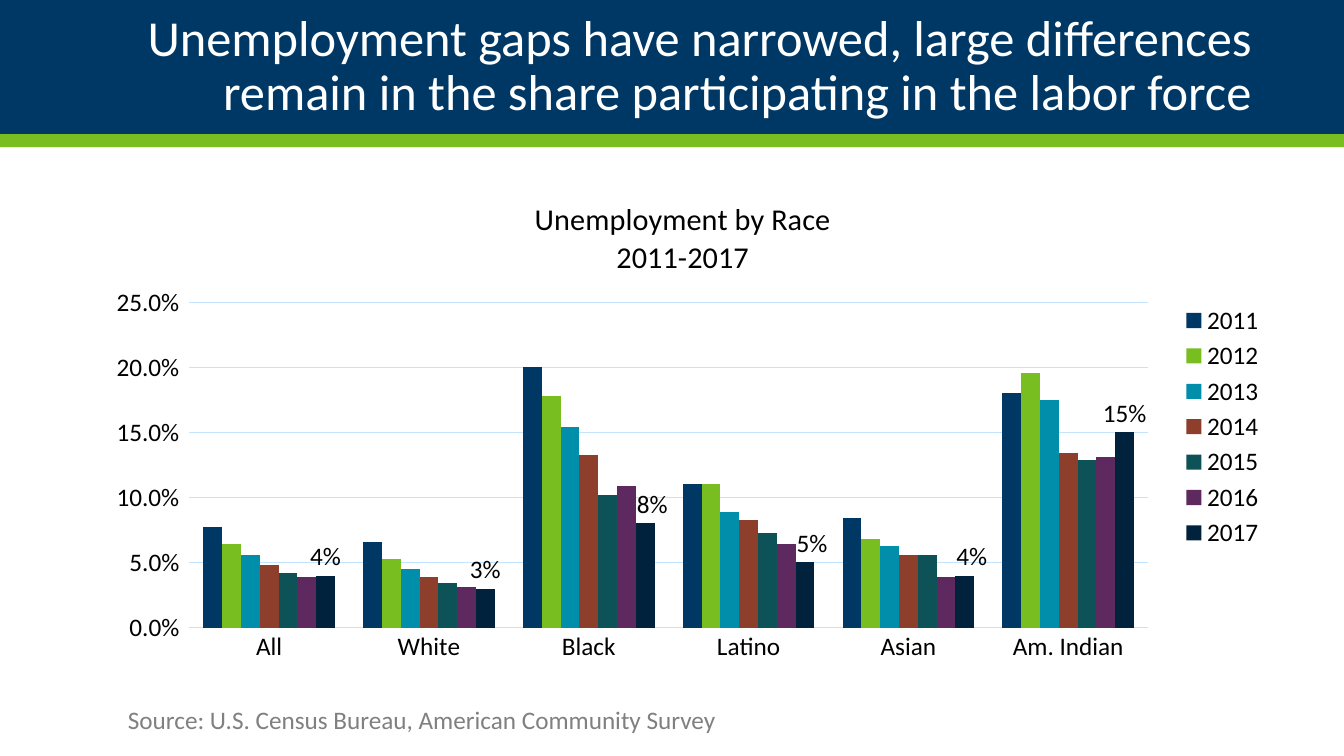
import pptx
import pptx.chart.data
import pptx.dml.color
import pptx.enum.chart
import pptx.enum.shapes
import pptx.enum.text
import pptx.oxml
import pptx.oxml.ns
import pptx.util

Inches = pptx.util.Inches
Pt = pptx.util.Pt
RGBColor = pptx.dml.color.RGBColor

NAVY = RGBColor(0x00, 0x38, 0x65)
GREEN = RGBColor(0x78, 0xBE, 0x21)
TEAL = RGBColor(0x00, 0x8E, 0xAA)
RUST = RGBColor(0x8D, 0x3F, 0x2B)
PINE = RGBColor(0x0D, 0x52, 0x57)
PLUM = RGBColor(0x5D, 0x29, 0x5F)
MIDNIGHT = RGBColor(0x00, 0x22, 0x3D)
PALE_BLUE = RGBColor(0xC2, 0xE4, 0xFF)
GRAY = RGBColor(0x80, 0x80, 0x80)
BLACK = RGBColor(0, 0, 0)
WHITE = RGBColor(0xFF, 0xFF, 0xFF)

GROUPS = ["All", "White", "Black", "Latino", "Asian", "Am. Indian"]
UNEMPLOYMENT = [
    ("2011", NAVY, (0.077, 0.066, 0.2, 0.11, 0.084, 0.18)),
    ("2012", GREEN, (0.064, 0.053, 0.178, 0.11, 0.068, 0.196)),
    ("2013", TEAL, (0.056, 0.045, 0.154, 0.089, 0.063, 0.175)),
    ("2014", RUST, (0.048, 0.039, 0.133, 0.083, 0.056, 0.134)),
    ("2015", PINE, (0.042, 0.034, 0.102, 0.073, 0.056, 0.129)),
    ("2016", PLUM, (0.039, 0.031, 0.109, 0.064, 0.039, 0.131)),
    ("2017", MIDNIGHT, (0.04, 0.03, 0.08, 0.05, 0.04, 0.15)),
]
SHIFTED_LABELS = ("Black", "Latino", "Asian")


def set_layout(element, index, **settings):
    """Give a chart part a manual layout, as its child number index."""
    for old in element.findall(pptx.oxml.ns.qn("c:layout")):
        element.remove(old)
    entries = "".join(f'<c:{name} val="{value}"/>' for name, value in settings.items())
    element.insert(index, pptx.oxml.parse_xml(
        f'<c:layout {pptx.oxml.ns.nsdecls("c")}>'
        f"<c:manualLayout>{entries}</c:manualLayout></c:layout>"))


class SlideBuilder:
    font_name = "Calibri"
    body_size = 18

    def __init__(self, page):
        self.page = page

    def style(self, font, color, size=body_size):
        font.name = self.font_name
        font.size = Pt(size)
        font.color.rgb = color

    def band(self, top, height, color):
        box = self.page.shapes.add_shape(
            pptx.enum.shapes.MSO_SHAPE.RECTANGLE,
            0, Inches(top), Inches(13.33), Inches(height))
        box.shadow.inherit = False
        box.fill.solid()
        box.fill.fore_color.rgb = color
        box.line.fill.background()

    def text(self, left, top, width, height, words, color, size=body_size):
        box = self.page.shapes.add_textbox(
            Inches(left), Inches(top), Inches(width), Inches(height))
        box.text_frame.word_wrap = True
        para = box.text_frame.paragraphs[0]
        para.text = words
        self.style(para.font, color, size)
        return box.text_frame

    def title(self, words):
        frame = self.text(0.92, 0, 11.5, 1.33, words, WHITE, 36)
        frame.margin_left = frame.margin_right = 0
        frame.vertical_anchor = pptx.enum.text.MSO_ANCHOR.MIDDLE
        frame.paragraphs[0].alignment = pptx.enum.text.PP_ALIGN.RIGHT
        frame.paragraphs[0].line_spacing = 0.9

    def column_chart(self, title_lines, groups, rows):
        data = pptx.chart.data.CategoryChartData(number_format="0.0%")
        data.categories = groups
        for year, color, values in rows:
            data.add_series(year, values)
        chart = self.page.shapes.add_chart(
            pptx.enum.chart.XL_CHART_TYPE.COLUMN_CLUSTERED,
            Inches(0.92), Inches(1.75), Inches(11.67), Inches(4.92), data).chart
        self.style(chart.font, BLACK)
        plot = chart.plots[0]
        plot.gap_width = 150
        plot.overlap = 0
        plot.vary_by_categories = False
        for series, (year, color, values) in zip(plot.series, rows):
            series.format.fill.solid()
            series.format.fill.fore_color.rgb = color
        set_layout(chart._chartSpace.chart.plotArea, 0, layoutTarget="inner",
                   xMode="edge", yMode="edge", x=0.082, y=0.254, w=0.815, h=0.656)
        self.chart_title(chart, title_lines)
        self.chart_axes(chart)
        self.chart_legend(chart)
        self.last_year_labels(plot.series[-1], groups)

    def chart_title(self, chart, lines):
        frame = chart.chart_title.text_frame
        frame.text = "\n".join(lines)
        for para in frame.paragraphs:
            self.style(para.font, BLACK, 21.6)
            para.font.bold = False
        set_layout(chart.chart_title._element, 1,
                   xMode="edge", yMode="edge", x=0.373, y=0.04)

    def chart_axes(self, chart):
        tick_mark = pptx.enum.chart.XL_TICK_MARK
        category, value = chart.category_axis, chart.value_axis
        for axis in (category, value):
            self.style(axis.tick_labels.font, BLACK)
        category.major_tick_mark = tick_mark.NONE
        value.major_tick_mark = tick_mark.OUTSIDE
        value.minimum_scale, value.maximum_scale, value.major_unit = 0, 0.25, 0.05
        value.tick_labels.number_format = "0.0%"
        value.tick_labels.number_format_is_linked = False
        value.format.line.fill.background()
        for line in (category.format.line, value.major_gridlines.format.line):
            line.color.rgb = PALE_BLUE
            line.width = Pt(0.75)

    def chart_legend(self, chart):
        chart.has_legend = True
        chart.legend.position = pptx.enum.chart.XL_LEGEND_POSITION.RIGHT
        chart.legend.include_in_layout = False
        self.style(chart.legend.font, BLACK)
        set_layout(chart.legend._element, 1, xMode="edge", yMode="edge",
                   x=0.92, y=0.25, w=0.08, h=0.51)

    def last_year_labels(self, series, groups):
        outside = pptx.enum.chart.XL_LABEL_POSITION.OUTSIDE_END
        labels = series.data_labels
        labels.show_value = True
        labels.number_format = "0%"
        labels.number_format_is_linked = False
        labels.position = outside
        self.style(labels.font, BLACK)
        for group in SHIFTED_LABELS:
            label = series.points[groups.index(group)].data_label
            self.style(label.font, BLACK)
            label.position = outside
            set_layout(label._dLbl, 1, x=0.006, y=0)


def main():
    deck = pptx.Presentation()
    deck.slide_width, deck.slide_height = Inches(13.33), Inches(7.5)
    slide = SlideBuilder(deck.slides.add_slide(deck.slide_layouts[6]))
    slide.band(0, 1.33, NAVY)
    slide.band(1.33, 0.13, GREEN)
    slide.title("Unemployment gaps have narrowed, large differences "
                "remain in the share participating in the labor force")
    slide.column_chart(["Unemployment by Race", "2011-2017"], GROUPS, UNEMPLOYMENT)
    slide.text(1.17, 6.94, 8.92, 0.4,
               "Source: U.S. Census Bureau, American Community Survey", GRAY)
    deck.save("out.pptx")


if __name__ == "__main__":
    main()
